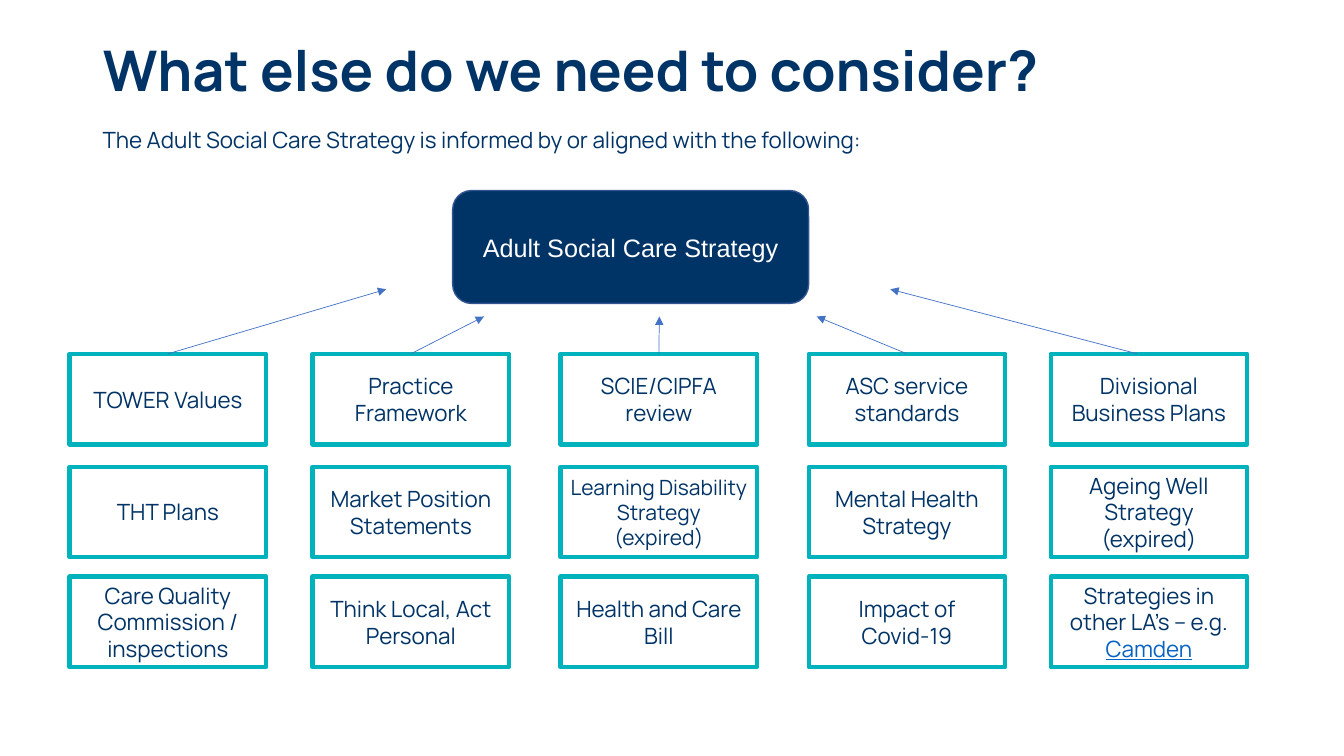
from pptx import Presentation, util as u
from pptx.dml.color import RGBColor
from pptx.enum import shapes, text
from pptx.oxml.ns import qn
from lxml import etree

NAVY, TEAL, BLUE, LINK, WHITE = "003366", "00B2BB", "4472C4", "0563C1", "FFFFFF"
BODY_FONT = "Manrope"
BOX_W, BOX_H = 1.95, 0.9
ROW_TOPS = (3.51, 4.63, 5.72)
COLUMN_LEFTS = (0.69, 3.1, 5.56, 8.02, 10.42)
ROWS = (
    ("TOWER Values", "Practice Framework", "SCIE/CIPFA review",
     "ASC service standards", "Divisional Business Plans"),
    ("THT Plans", "Market Position Statements", "Learning Disability Strategy (expired)",
     "Mental Health Strategy", "Ageing Well Strategy (expired)"),
    ("Care Quality Commission / inspections", "Think Local, Act Personal",
     "Health and Care Bill", "Impact of Covid-19", "Strategies in other LA’s – e.g. "),
)
ARROW_TIPS = ((3.83, 2.87), (4.8, 3.14), (6.54, 3.14), (8.1, 3.14), (8.83, 2.87))
LAST_ARROW_X = 11.28


def rgb(value):
    return RGBColor.from_string(value)


def place(sp, left, top, width, height):
    sp.left, sp.top, sp.width, sp.height = map(u.Inches, (left, top, width, height))


def write(sp, words, size, color=NAVY, font=BODY_FONT, align=text.PP_ALIGN.LEFT,
          anchor=text.MSO_ANCHOR.MIDDLE, bold=False):
    tf = sp.text_frame
    tf.word_wrap = True
    tf.vertical_anchor = anchor
    p = tf.paragraphs[0]
    p.add_run().text = words
    p.alignment = align
    p.font.name, p.font.size, p.font.bold = font, u.Pt(size), bold
    p.font.color.rgb = rgb(color)
    return p


def add_box(s, kind, at, fill, line, line_width):
    sp = s.shapes.add_shape(kind, *map(u.Inches, at))
    sp.shadow.inherit = False
    sp.fill.solid()
    sp.fill.fore_color.rgb = rgb(fill)
    sp.line.color.rgb = rgb(line)
    sp.line.width = u.Pt(line_width)
    return sp


def add_arrow(s, start, tip):
    c = s.shapes.add_connector(shapes.MSO_CONNECTOR.STRAIGHT, *map(u.Inches, start + tip))
    c.line.color.rgb = rgb(BLUE)
    c.line.width = u.Pt(0.5)
    etree.SubElement(c.line._get_or_add_ln(), qn("a:tailEnd"), type="triangle")
    etree.SubElement(c._element.spPr, qn("a:effectLst"))
    return c


def add_grid(s):
    """Draw the labelled boxes and return the top row and the last paragraph."""
    boxes = []
    for top, labels in zip(ROW_TOPS, ROWS):
        for left, label in zip(COLUMN_LEFTS, labels):
            sp = add_box(s, shapes.MSO_SHAPE.RECTANGLE, (left, top, BOX_W, BOX_H),
                         WHITE, TEAL, 3)
            size = 15 if label.startswith("Learning") else 16
            p = write(sp, label, size, align=text.PP_ALIGN.CENTER)
            boxes.append(sp)
    return boxes[:len(COLUMN_LEFTS)], p


def main():
    prs = Presentation()
    prs.slide_width, prs.slide_height = u.Inches(13.33), u.Inches(7.5)
    s = prs.slides.add_slide(prs.slide_layouts[5])

    title = s.shapes.title
    place(title, 0.92, 0, 10.69, 1.45)
    write(title, "What else do we need to consider?", 40, bold=True).line_spacing = 0.9

    intro = s.shapes.add_textbox(0, 0, 0, 0)
    place(intro, 0.92, 1.2, 10.63, 0.37)
    write(intro, "The Adult Social Care Strategy is informed by or aligned with the following:",
          16, anchor=text.MSO_ANCHOR.TOP)

    strategy = add_box(s, shapes.MSO_SHAPE.ROUNDED_RECTANGLE, (4.49, 1.89, 3.53, 1.12),
                       NAVY, "325491", 1)
    write(strategy, "Adult Social Care Strategy", 18, WHITE, "Arial", text.PP_ALIGN.CENTER)

    top_row, last_p = add_grid(s)
    link = last_p.add_run()
    link.text = "Camden"
    link.font.underline = True
    link.font.color.rgb = rgb(LINK)

    for sp, left, tip in zip(top_row[:-1], COLUMN_LEFTS, ARROW_TIPS):
        arrow = add_arrow(s, (left + BOX_W / 2, ROW_TOPS[0]), tip)
        arrow.begin_connect(sp, 0)
    add_arrow(s, (LAST_ARROW_X, ROW_TOPS[0]), ARROW_TIPS[-1])

    prs.save("out.pptx")


if __name__ == "__main__":
    main()
